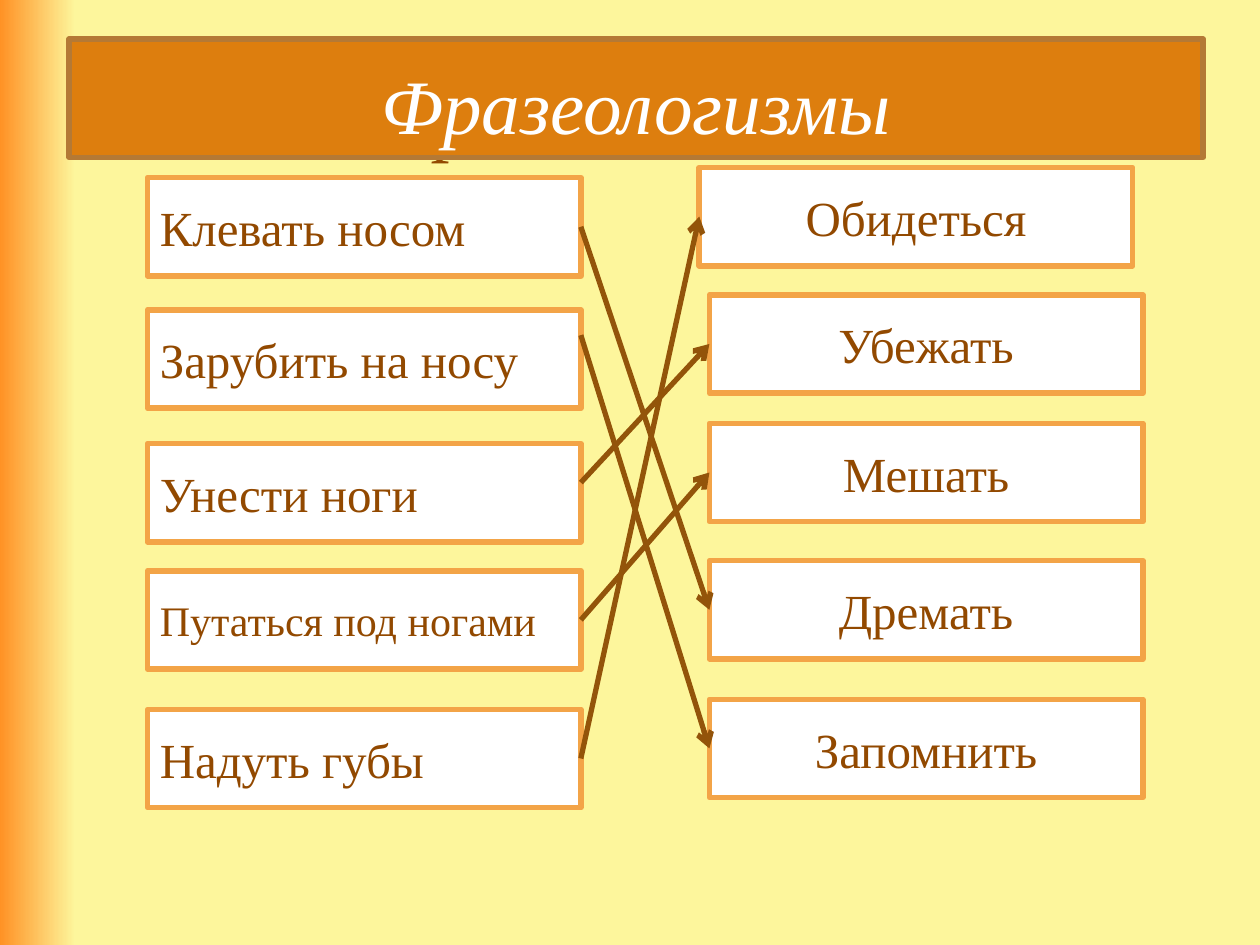
from lxml import etree
from pptx import Presentation
from pptx.dml.color import RGBColor
from pptx.enum.shapes import MSO_CONNECTOR, MSO_SHAPE
from pptx.enum.text import MSO_ANCHOR, PP_ALIGN
from pptx.oxml.ns import qn
from pptx.util import Inches, Pt

RECT, PROCESS = MSO_SHAPE.RECTANGLE, MSO_SHAPE.FLOWCHART_PROCESS
STRAIGHT = MSO_CONNECTOR.STRAIGHT
LEFT, CENTER = PP_ALIGN.LEFT, PP_ALIGN.CENTER
MIDDLE = MSO_ANCHOR.MIDDLE
LEFT_SIDE, RIGHT_SIDE = 1, 3

WHITE = RGBColor(0xFF, 0xFF, 0xFF)
BROWN = RGBColor(0x92, 0x49, 0x00)
ARROW = RGBColor(0x93, 0x54, 0x0A)
AMBER = RGBColor(0xF3, 0xA4, 0x47)
ORANGE = RGBColor(0xDD, 0x7E, 0x0E)
BRONZE = RGBColor(0xB4, 0x79, 0x35)
CREAM = RGBColor(0xFD, 0xF6, 0x9C)
FLAME = RGBColor(0xFF, 0x92, 0x25)

CARD_W, CARD_H = 3.44, 0.78


class Board:
    font = "Times New Roman"
    edge = Pt(3.15)

    def __init__(self, slide):
        self.slide = slide
        self.shapes = slide.shapes

    def backdrop(self, stops, angle):
        fill = self.slide.background.fill
        fill.gradient()
        fill.gradient_angle = angle
        for stop, (place, color) in zip(fill.gradient_stops, stops):
            stop.position = place
            stop.color.rgb = color

    def put_text(self, shape, text, size, color, align, italic=False):
        frame = shape.text_frame
        frame.word_wrap = True
        frame.vertical_anchor = MIDDLE
        par = frame.paragraphs[0]
        par.alignment = align
        run = par.add_run()
        run.text = text
        run.font.name = self.font
        run.font.size = Pt(size)
        run.font.italic = italic
        run.font.color.rgb = color
        return par

    def label(self, area, text, size, color):
        box = self.shapes.add_textbox(*map(Inches, area))
        self.put_text(box, text, size, color, CENTER, italic=True)

    def box(self, kind, area, fill, line):
        shape = self.shapes.add_shape(kind, *map(Inches, area))
        shape.shadow.inherit = False
        shape.fill.solid()
        shape.fill.fore_color.rgb = fill
        shape.line.color.rgb = line
        shape.line.width = self.edge
        return shape

    def banner(self, area, text):
        shape = self.box(RECT, area, ORANGE, BRONZE)
        par = self.put_text(shape, text, 44, WHITE, CENTER, italic=True)
        par.line_spacing = 0.8
        shape.text_frame.margin_top = Inches(0.27)

    def card(self, left, top, text, size, align):
        shape = self.box(PROCESS, (left, top, CARD_W, CARD_H), WHITE, AMBER)
        self.put_text(shape, text, size, BROWN, align)
        return shape

    def arrow(self, source, target, start=None):
        """Join two cards; start is a height when off the side's middle."""
        line = self.shapes.add_connector(STRAIGHT, 0, 0, 0, 0)
        if start is None:
            line.begin_connect(source, RIGHT_SIDE)
        else:
            line.begin_x = source.left + source.width
            line.begin_y = Inches(start)
        line.end_connect(target, LEFT_SIDE)
        line.line.color.rgb = ARROW
        line.line.width = Pt(3)
        props = line.element.spPr
        etree.SubElement(props.find(qn("a:ln")), qn("a:tailEnd"), type="arrow")
        etree.SubElement(props, qn("a:effectLst"))


def main():
    deck = Presentation()
    deck.slide_width, deck.slide_height = Inches(10), Inches(7.5)
    board = Board(deck.slides.add_slide(deck.slide_layouts[6]))
    board.backdrop([(0.94, CREAM), (1, FLAME)], 180)

    # Title, with the banner over it
    title = "Фразеологизмы"
    board.label((0.5, 0.3, 9, 1.25), title, 44, BROWN)

    # Idioms
    idioms = [board.card(1.17, top, text, size, LEFT) for top, text, size in (
        (1.41, "Клевать носом", 28),
        (2.46, "Зарубить на носу", 28),
        (3.52, "Унести ноги", 28),
        (4.53, "Путаться под ногами", 24),
        (5.63, "Надуть губы", 28),
    )]

    # Meanings
    senses = [board.card(left, top, text, 28, CENTER) for left, top, text in (
        (5.55, 1.33, "Обидеться"),
        (5.63, 2.34, "Убежать"),
        (5.63, 3.36, "Мешать"),
        (5.63, 4.45, "Дремать"),
        (5.63, 5.55, "Запомнить"),
    )]

    board.banner((0.55, 0.31, 9, 0.94), title)

    # Matches: idiom, meaning, start height if not the middle
    for idiom, sense, start in (
        (0, 3, None), (1, 4, 2.66), (4, 0, None), (2, 1, 3.83), (3, 2, None),
    ):
        board.arrow(idioms[idiom], senses[sense], start)

    deck.save("out.pptx")


if __name__ == "__main__":
    main()
